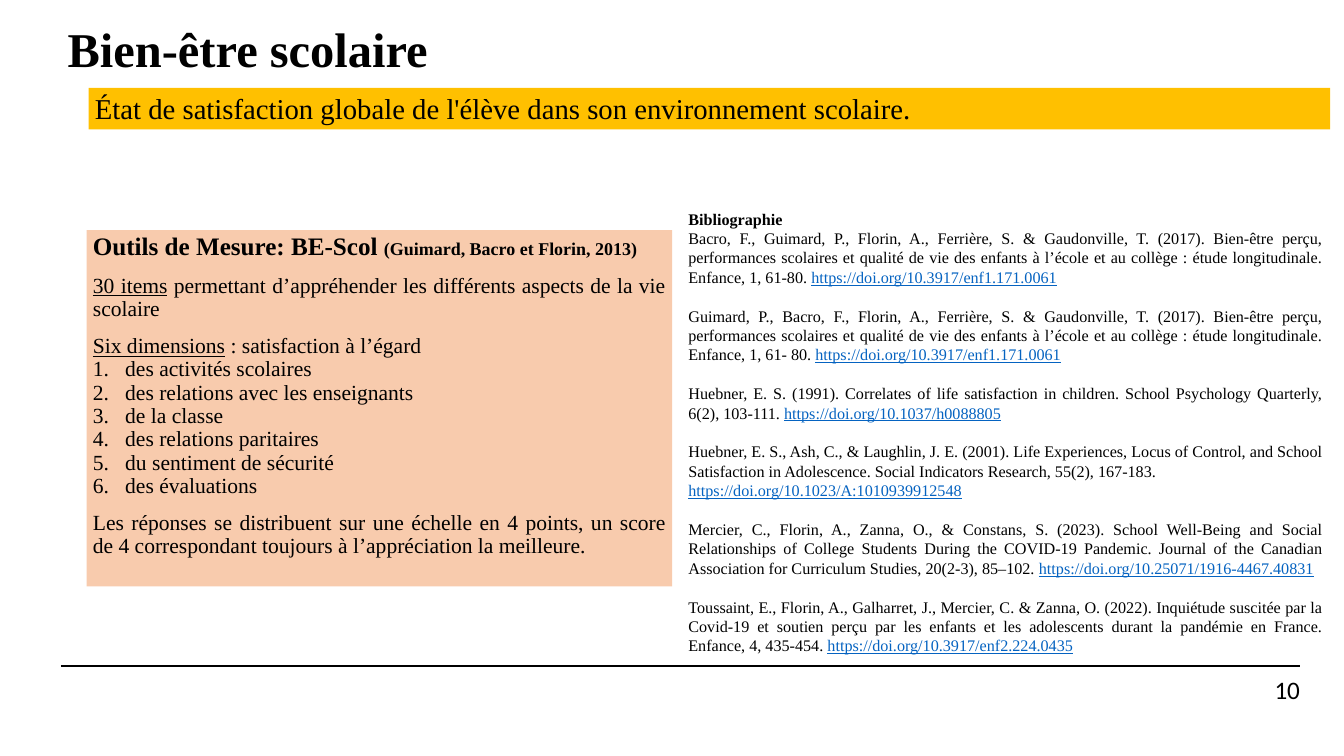
from dataclasses import dataclass, field
from typing import Any

from lxml.etree import SubElement
from pptx import Presentation
from pptx.dml.color import RGBColor
from pptx.enum.shapes import MSO_CONNECTOR, MSO_SHAPE
from pptx.enum.text import MSO_ANCHOR, PP_ALIGN
from pptx.oxml.ns import qn
from pptx.util import Cm, Pt

SERIF = "Times New Roman"
BLACK, LINK = "000000", "0563C1"
JUSTIFY = PP_ALIGN.JUSTIFY


@dataclass
class Run:
    text: str
    size: float = 24
    color: str = BLACK
    name: str = SERIF
    style: dict[str, Any] = field(default_factory=dict)


@dataclass
class Para:
    runs: list[Run]
    before: float = 0
    spacing: float = 1.0
    align: PP_ALIGN = JUSTIFY
    numbered: bool = False


@dataclass
class Box:
    left: float
    top: float
    width: float
    height: float
    paras: list[Para]
    fill: str = ""
    anchor: MSO_ANCHOR = MSO_ANCHOR.TOP
    inset: tuple[float, float] = (0.25, 0.13)


@dataclass
class Reference:
    text: str
    url: str
    own_line: bool = False


def rgb(value: str) -> RGBColor:
    return RGBColor.from_string(value)


def add_number(p: Any) -> None:
    pPr = p._p.get_or_add_pPr()
    pPr.set("marL", str(Cm(1.27)))
    pPr.set("indent", str(-Cm(1.27)))
    SubElement(pPr, qn("a:buFont"), typeface="+mj-lt")
    SubElement(pPr, qn("a:buAutoNum"), type="arabicPeriod")


def write(tf: Any, paras: list[Para]) -> None:
    for i, para in enumerate(paras):
        p = tf.paragraphs[0] if i == 0 else tf.add_paragraph()
        formats = {"alignment": para.align, "line_spacing": para.spacing,
                   "space_before": Pt(para.before), "space_after": Pt(0)}
        for key, value in formats.items():
            setattr(p, key, value)
        if para.numbered:
            add_number(p)
        for run in para.runs:
            r = p.add_run()
            r.text = run.text
            formats = {"name": run.name, "size": Pt(run.size), **run.style}
            for key, value in formats.items():
                setattr(r.font, key, value)
            r.font.color.rgb = rgb(run.color)


def fill_box(sp: Any, box: Box) -> None:
    for key in ("left", "top", "width", "height"):
        setattr(sp, key, Cm(getattr(box, key)))
    side, edge = (Cm(v) for v in box.inset)
    formats = {"word_wrap": True, "vertical_anchor": box.anchor,
               "margin_left": side, "margin_right": side,
               "margin_top": edge, "margin_bottom": edge}
    for key, value in formats.items():
        setattr(sp.text_frame, key, value)
    write(sp.text_frame, box.paras)


def add_box(s: Any, box: Box) -> None:
    area = [Cm(v) for v in (box.left, box.top, box.width, box.height)]
    if box.fill:
        sp = s.shapes.add_shape(MSO_SHAPE.RECTANGLE, *area)
        sp.shadow.inherit = False
        sp.fill.solid()
        sp.fill.fore_color.rgb = rgb(box.fill)
        sp.line.fill.background()
    else:
        sp = s.shapes.add_textbox(*area)
    fill_box(sp, box)


def add_rule(s: Any, left: float, right: float, y: float) -> None:
    c = s.shapes.add_connector(MSO_CONNECTOR.STRAIGHT, Cm(left), Cm(y), Cm(right), Cm(y))
    c.line.color.rgb = rgb(BLACK)
    c.line.width = Pt(2)
    SubElement(c._element.spPr, qn("a:effectLst"))


def reference_paras(refs: list[Reference]) -> list[Para]:
    paras = [Para([Run("Bibliographie", 18, style={"bold": True})], align=PP_ALIGN.LEFT)]
    for i, ref in enumerate(refs):
        before = 21.6 if i else 0
        link = Run(ref.url, 18, LINK, style={"underline": True})
        if ref.own_line:
            paras += [Para([Run(ref.text, 18)], before), Para([link])]
        else:
            paras.append(Para([Run(ref.text + " ", 18), link], before))
    return paras


DIMENSIONS = [
    "des activités scolaires",
    "des relations avec les enseignants",
    "de la classe",
    "des relations paritaires",
    "du sentiment de sécurité",
    "des évaluations",
]

REFERENCES = [
    Reference("Bacro, F., Guimard, P., Florin, A., Ferrière, S. & Gaudonville, T. (2017). Bien-être perçu, "
              "performances scolaires et qualité de vie des enfants à l’école et au collège : étude "
              "longitudinale. Enfance, 1, 61-80.", "https://doi.org/10.3917/enf1.171.0061"),
    Reference("Guimard, P., Bacro, F., Florin, A., Ferrière, S. & Gaudonville, T. (2017). Bien-être perçu, "
              "performances scolaires et qualité de vie des enfants à l’école et au collège : étude "
              "longitudinale. Enfance, 1, 61- 80.", "https://doi.org/10.3917/enf1.171.0061"),
    Reference("Huebner, E. S. (1991). Correlates of life satisfaction in children. School Psychology "
              "Quarterly, 6(2), 103-111.", "https://doi.org/10.1037/h0088805"),
    Reference("Huebner, E. S., Ash, C., & Laughlin, J. E. (2001). Life Experiences, Locus of Control, and "
              "School Satisfaction in Adolescence. Social Indicators Research, 55(2), 167-183.",
              "https://doi.org/10.1023/A:1010939912548", own_line=True),
    Reference("Mercier, C., Florin, A., Zanna, O., & Constans, S. (2023). School Well-Being and Social "
              "Relationships of College Students During the COVID-19 Pandemic. Journal of the Canadian "
              "Association for Curriculum Studies, 20(2-3), 85–102.",
              "https://doi.org/10.25071/1916-4467.40831"),
    Reference("Toussaint, E., Florin, A., Galharret, J., Mercier, C. & Zanna, O. (2022). Inquiétude suscitée "
              "par la Covid-19 et soutien perçu par les enfants et les adolescents durant la pandémie en "
              "France. Enfance, 4, 435-454.", "https://doi.org/10.3917/enf2.224.0435"),
]

MEASURE = [
    Para([Run("Outils de Mesure: BE-Scol ", 28, style={"bold": True}),
          Run("(Guimard, Bacro et Florin, 2013)", 20, style={"bold": True})], 0, 0.9),
    Para([Run("30 items", style={"underline": True}),
          Run(" permettant d’appréhender les différents aspects de la vie scolaire")], 15.6, 0.9),
    Para([Run("Six dimensions", style={"underline": True}),
          Run(" : satisfaction à l’égard")], 15.6, 0.9),
    *[Para([Run(text)], 0, 0.9, numbered=True) for text in DIMENSIONS],
    Para([Run("Les réponses se distribuent sur une échelle en 4 points, un score de 4 correspondant "
              "toujours à l’appréciation la meilleure.")], 15.6, 0.9),
]

TITLE = Box(2.41, 0.84, 49.81, 2.36,
            [Para([Run("Bien-être scolaire", 54, style={"bold": True})], 0, 0.9, PP_ALIGN.LEFT)],
            anchor=MSO_ANCHOR.MIDDLE)

BOXES = [
    Box(45.26, 26.49, 5.82, 1.19, [Para([Run("10", 28, name="Calibri")], align=PP_ALIGN.RIGHT)],
        anchor=MSO_ANCHOR.MIDDLE, inset=(0, 0)),
    Box(3.48, 3.45, 48.79, 1.63,
        [Para([Run("État de satisfaction globale de l'élève dans son environnement scolaire.", 32)])],
        fill="FFC000"),
    Box(3.4, 9.04, 23.01, 14, MEASURE, fill="F8CBAD"),
    Box(26.8, 8.08, 25.43, 17.96, reference_paras(REFERENCES)),
]


def main() -> None:
    prs = Presentation()
    prs.slide_width, prs.slide_height = Cm(52.81), Cm(29.7)
    s = prs.slides.add_slide(prs.slide_layouts[5])
    add_rule(s, 2.39, 51.08, 26.16)
    fill_box(s.shapes.title, TITLE)
    for box in BOXES:
        add_box(s, box)
    prs.save("out.pptx")


if __name__ == "__main__":
    main()
